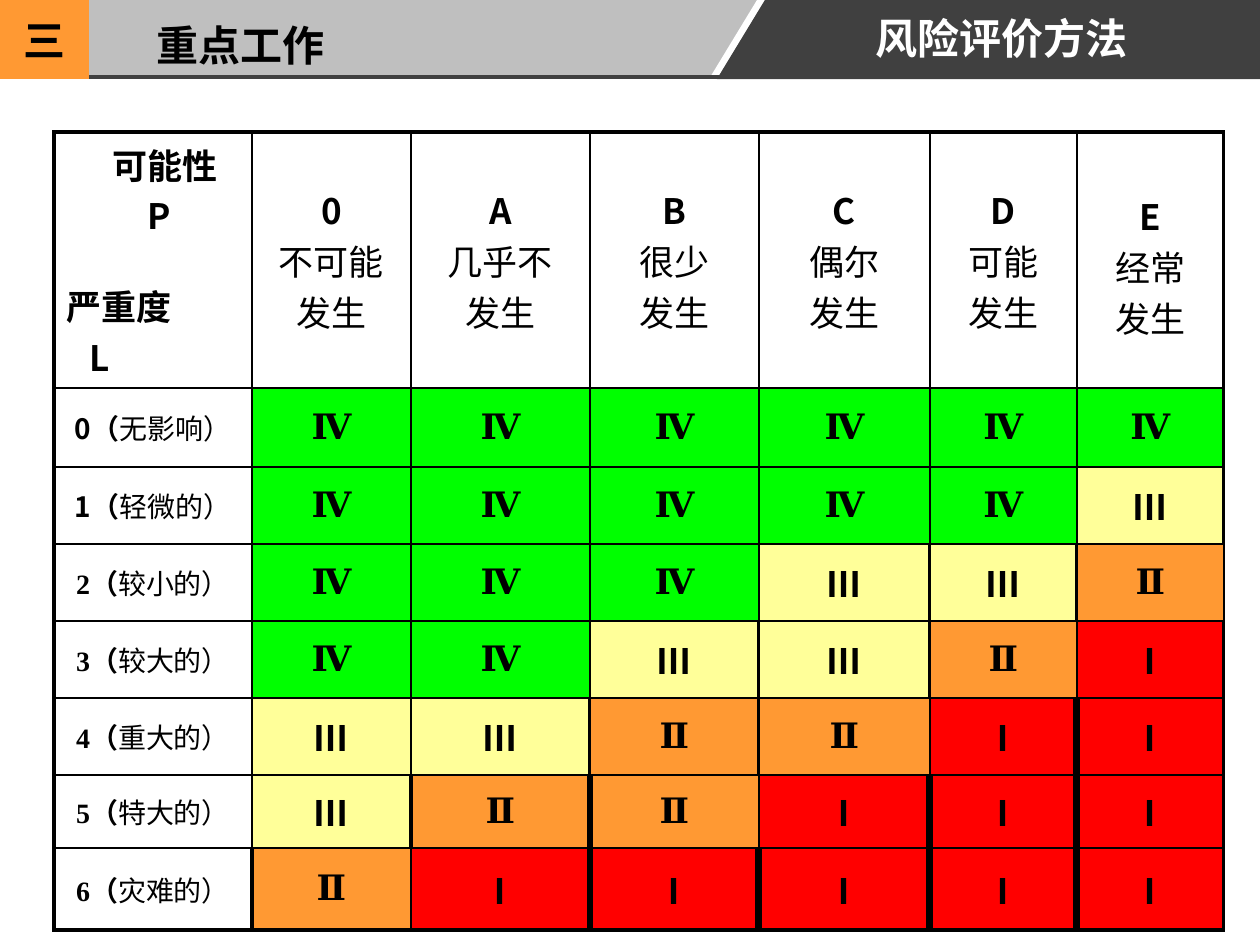
from lxml.etree import SubElement
from pptx import Presentation
from pptx.dml.color import RGBColor
from pptx.enum.shapes import MSO_CONNECTOR, MSO_SHAPE
from pptx.enum.text import MSO_ANCHOR, PP_ALIGN
from pptx.oxml.ns import qn
from pptx.util import Emu, Pt

SANS, SERIF = "Noto Sans CJK SC", "Times New Roman"
COLORS = {
    "black": "000000", "white": "FFFFFF", "gray": "BFBFBF", "dark": "404040",
    "orange": "FF9933", "green": "00FF00", "yellow": "FFFF99", "red": "FF0000",
}

# Banner: outlines in px, then texts as (text, box, color, align, wrap)
BANNER = [
    ("white", [(757, 0), (765, 0), (717, 79), (709, 79)]),
    ("dark", [(765, 0), (1260, 0), (1260, 79), (717, 79)]),
]
TITLES = [
    ("风险评价方法", (689, 6, 625, 64), "white", PP_ALIGN.CENTER, True),
    ("重点工作", (144, 13, 197, 64), "black", PP_ALIGN.LEFT, False),
    ("三", (11, 8, 68, 64), "black", PP_ALIGN.LEFT, False),
]

# Risk matrix
TABLE_AT = (54, 132)
COL_WIDTHS = [198, 159, 179, 169, 171, 147, 147]
ROW_HEIGHTS = [223, 79, 77, 77, 77, 77, 73, 82]
# Corner lines: text, align, left margin px, space before pt
CORNER = [
    ("可能性", PP_ALIGN.CENTER, 24, 0),
    ("P", PP_ALIGN.CENTER, 12, 0),
    ("严重度", PP_ALIGN.LEFT, 0, 23),
    ("L", PP_ALIGN.LEFT, 23, 0),
]
LIKELIHOODS = [
    ("0", "不可能", "发生"), ("A", "几乎不", "发生"), ("B", "很少", "发生"),
    ("C", "偶尔", "发生"), ("D", "可能", "发生"), ("E", "经常", "发生"),
]
SEVERITIES = ["无影响", "轻微的", "较小的", "较大的", "重大的", "特大的", "灾难的"]
LEVELS = ["444444", "444443", "444332", "443321", "332211", "322111", "211111"]
GRADES = {
    "4": ("Ⅳ", SERIF, "green"), "3": ("Ⅲ", SANS, "yellow"),
    "2": ("Ⅱ", SERIF, "orange"), "1": ("Ⅰ", SANS, "red"),
}
# Weights of the eight vertical rules in each row
RULES = ["21111112", "21111112", "21111112", "21111221",
         "21112212", "21122142", "21241442", "22144442"]
WEIGHTS = {"1": 1, "2": 2, "4": 4.5}


def px(value):
    return Emu(round(value * 914400 / 126))


def rgb(name):
    return RGBColor.from_string(COLORS[name])


def paint(shape, color):
    shape.shadow.inherit = False
    shape.fill.solid()
    shape.fill.fore_color.rgb = rgb(color)
    shape.line.fill.background()


def style(font, size, bold, face=SANS, asian=SANS, color="black"):
    font.size, font.bold, font.name = Pt(size), bold, face
    font.color.rgb = rgb(color)
    SubElement(font._element, qn("a:ea"), typeface=asian)


def add_para(frame, first, align=PP_ALIGN.CENTER):
    para = frame.paragraphs[0] if first else frame.add_paragraph()
    para.alignment = align
    return para


def finish_cell(cell, row, col, color):
    bottom = 2 if row == len(ROW_HEIGHTS) - 1 else 1
    sides = {
        "L": WEIGHTS[RULES[row][col]], "R": WEIGHTS[RULES[row][col + 1]],
        "T": 1 if row else 2, "B": bottom,
    }
    props = cell._tc.get_or_add_tcPr()
    for side, weight in sides.items():
        line = SubElement(props, qn("a:ln" + side), w=str(Pt(weight)))
        fill = SubElement(line, qn("a:solidFill"))
        SubElement(fill, qn("a:srgbClr"), val=COLORS["black"])
    cell.fill.solid()
    cell.fill.fore_color.rgb = rgb(color)
    if row or col:
        cell.vertical_anchor = MSO_ANCHOR.MIDDLE


deck = Presentation()
deck.slide_width, deck.slide_height = px(1260), px(945)
page = deck.slides.add_slide(deck.slide_layouts[6])
shapes = page.shapes

# Banner background
for color, width in (("gray", 1260), ("orange", 89)):
    paint(shapes.add_shape(MSO_SHAPE.RECTANGLE, 0, 0, px(width), px(79)), color)
for color, points in BANNER:
    outline = shapes.build_freeform(*points[0], scale=914400 / 126)
    outline.add_line_segments(points[1:], close=True)
    paint(outline.convert_to_shape(), color)
rule = shapes.add_connector(MSO_CONNECTOR.STRAIGHT, px(89), px(77), px(732), px(77))
rule.line.color.rgb, rule.line.width = rgb("dark"), Pt(2)
SubElement(rule._element.spPr, qn("a:effectLst"))

# Table grid
table = shapes.add_table(
    len(ROW_HEIGHTS), len(COL_WIDTHS), *map(px, TABLE_AT),
    px(sum(COL_WIDTHS)), px(sum(ROW_HEIGHTS))).table
table.first_row = table.horz_banding = False
for column, width in zip(table.columns, COL_WIDTHS):
    column.width = px(width)
for table_row, height in zip(table.rows, ROW_HEIGHTS):
    table_row.height = px(height)

# Header row
corner = table.cell(0, 0)
finish_cell(corner, 0, 0, "white")
for i, (text, align, margin, before) in enumerate(CORNER):
    para = add_para(corner.text_frame, i == 0, align)
    para.text, para.space_before = text, Pt(before)
    para._p.get_or_add_pPr().set("marL", str(px(margin)))
    style(para.font, 20, True)
for col, lines in enumerate(LIKELIHOODS, 1):
    cell = table.cell(0, col)
    finish_cell(cell, 0, col, "white")
    for i, text in enumerate(lines):
        para = add_para(cell.text_frame, i == 0)
        para.text = text
        style(para.font, 20, i == 0)
table.cell(0, len(LIKELIHOODS)).margin_top = px(18)  # last heading sits lower

# Severity rows
for row, (label, levels) in enumerate(zip(SEVERITIES, LEVELS), 1):
    cell = table.cell(row, 0)
    finish_cell(cell, row, 0, "white")
    para = add_para(cell.text_frame, True)
    face = SANS if row <= 2 else SERIF
    for text, span_face, bold in ((str(row - 1), face, True), ("（", SANS, True),
                                  (label, face, False), ("）", SANS, False)):
        span = para.add_run()
        span.text = text
        style(span.font, 16, bold, span_face)
    for col, level in enumerate(levels, 1):
        numeral, face, color = GRADES[level]
        cell = table.cell(row, col)
        finish_cell(cell, row, col, color)
        para = add_para(cell.text_frame, True)
        para.text = numeral
        style(para.font, 20, True, face, face)

# Banner titles
for text, place, color, align, wrap in TITLES:
    box = shapes.add_textbox(*map(px, place))
    box.text_frame.word_wrap = wrap
    para = add_para(box.text_frame, True, align)
    para.text = text
    style(para.font, 24, True, color=color)

deck.save("out.pptx")
